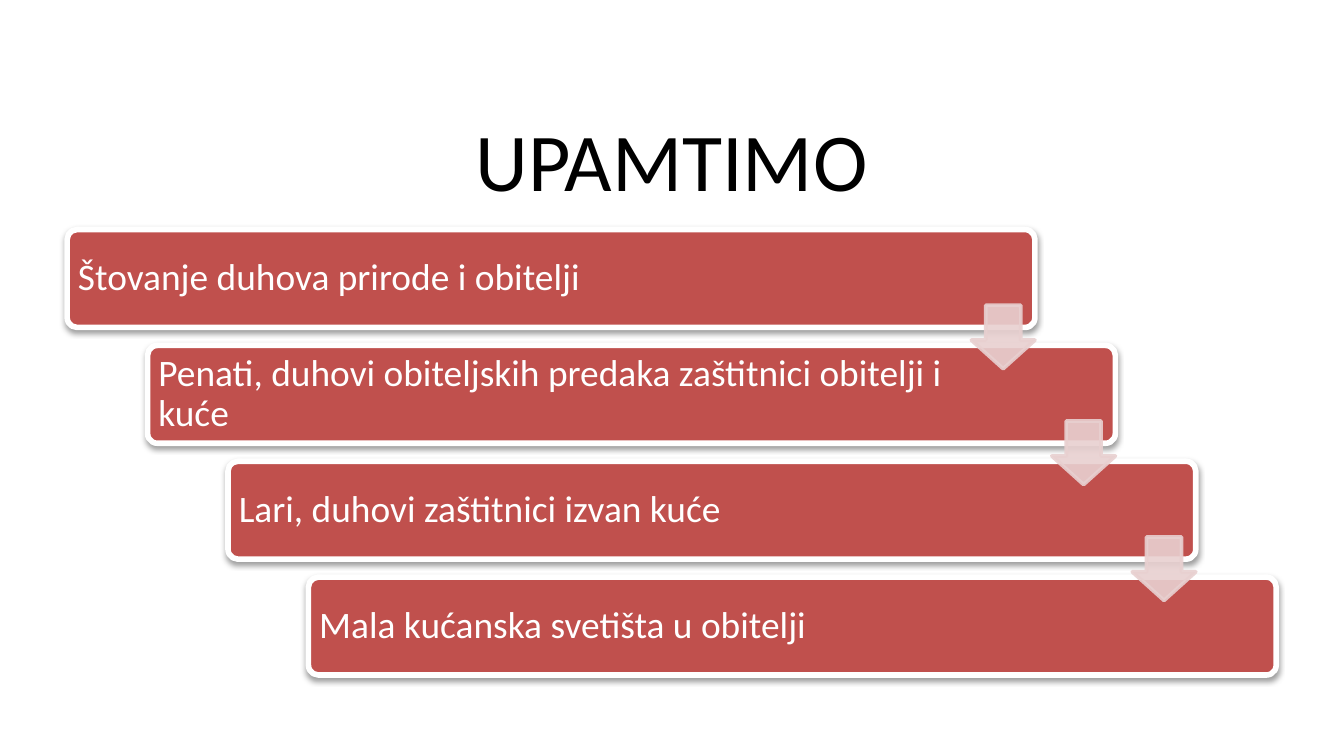
from dataclasses import dataclass

from lxml.etree import SubElement
from pptx import Presentation
from pptx.dml.color import RGBColor
from pptx.enum.shapes import MSO_SHAPE as Shape
from pptx.enum.text import MSO_ANCHOR as Anchor, PP_ALIGN as Align
from pptx.oxml import parse_xml
from pptx.oxml.ns import nsdecls, qn
from pptx.util import Cm, Pt


@dataclass(frozen=True)
class Theme:
    font: str = "Calibri"
    title_size: Pt = Pt(44)
    step_size: Pt = Pt(20)
    black: RGBColor = RGBColor(0, 0, 0)
    white: RGBColor = RGBColor(255, 255, 255)
    red: RGBColor = RGBColor(0xC0, 0x50, 0x4D)
    pink: RGBColor = RGBColor(0xE8, 0xD0, 0xD0)


theme = Theme()


def write(shape, text, size, color, align):
    frame = shape.text_frame
    frame.word_wrap = True
    frame.vertical_anchor = Anchor.MIDDLE
    paragraph = frame.paragraphs[0]
    paragraph.alignment = align
    paragraph.line_spacing = 0.9
    run = paragraph.add_run()
    run.text = text
    run.font.name = theme.font
    run.font.size = size
    run.font.color.rgb = color
    return frame


def add_block(kind, left, top, width, height, fill, line, line_width):
    shape = slide.shapes.add_shape(kind, Cm(left), Cm(top), Cm(width), Cm(height))
    shape.shadow.inherit = False
    shape.fill.solid()
    shape.fill.fore_color.rgb = fill
    shape.line.color.rgb = line
    shape.line.width = line_width
    return shape


presentation = Presentation()
presentation.slide_width = Cm(25.4)
presentation.slide_height = Cm(14.29)
slide = presentation.slides.add_slide(presentation.slide_layouts[6])

title = slide.shapes.add_textbox(Cm(1.27), Cm(2.13), Cm(22.86), Cm(1.98))
write(title, "UPAMTIMO", theme.title_size, theme.black, Align.CENTER)

steps = [
    "Štovanje duhova prirode i obitelji",
    "Penati, duhovi obiteljskih predaka zaštitnici obitelji i kuće",
    "Lari, duhovi zaštitnici izvan kuće",
    "Mala kućanska svetišta u obitelji",
]
step_right, step_down = 1.52, 2.19

for index, text in enumerate(steps):
    bar = add_block(Shape.ROUNDED_RECTANGLE, 1.27 + index * step_right,
                    4.34 + index * step_down, 18.29, 1.85,
                    theme.red, theme.white, Pt(3))
    bar.adjustments[0] = 0.1
    frame = write(bar, text, theme.step_size, theme.white, Align.LEFT)
    frame.margin_left = frame.margin_top = frame.margin_bottom = Cm(0.15)
    frame.margin_right = Cm(2.9)
    effects = bar._element.spPr.find(qn("a:effectLst"))
    effects.append(parse_xml(
        f'<a:outerShdw {nsdecls("a")} blurRad="{Pt(3.1)}" dist="{Pt(1.6)}" '
        'dir="5400000" rotWithShape="0"><a:srgbClr val="000000">'
        '<a:alpha val="38000"/></a:srgbClr></a:outerShdw>'))

for index in range(len(steps) - 1):
    arrow = add_block(Shape.DOWN_ARROW, 18.36 + index * step_right,
                      5.77 + index * step_down, 1.2, 1.2,
                      theme.pink, theme.pink, Pt(2))
    arrow.adjustments[0] = 0.55
    arrow.adjustments[1] = 0.45
    for color in arrow._element.spPr.iter(qn("a:srgbClr")):
        SubElement(color, qn("a:alpha")).set("val", "90000")

presentation.save("out.pptx")
